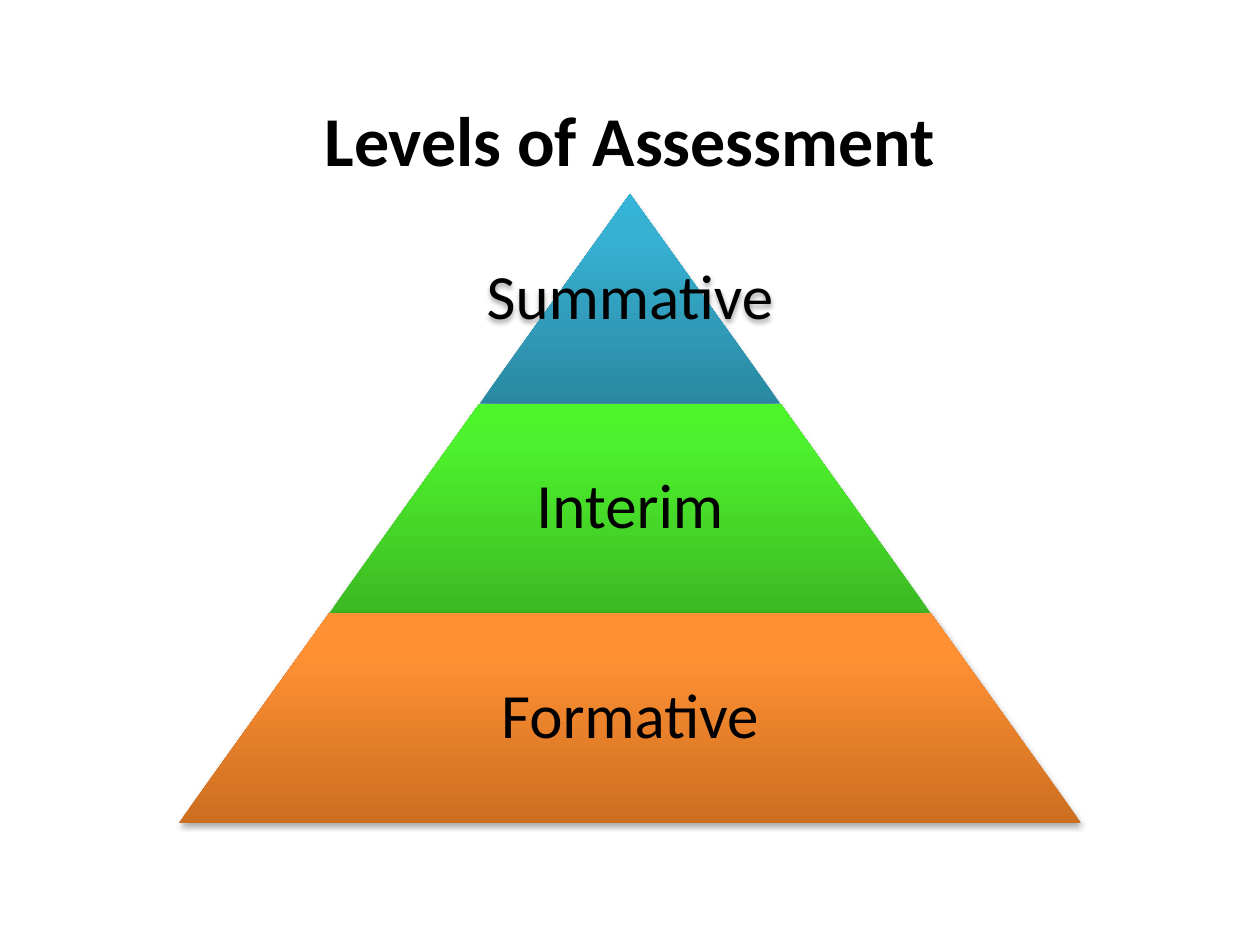
from dataclasses import dataclass
from lxml.etree import SubElement
from pptx import Presentation
from pptx.dml.color import RGBColor
from pptx.enum.text import MSO_ANCHOR, PP_ALIGN
from pptx.oxml.ns import qn
from pptx.util import Inches, Pt


@dataclass(frozen=True)
class Theme:
    font: str = "Calibri"
    ink: str = "000000"
    title_size: int = 40
    level_size: int = 36
    blue: tuple = ("2A88A2", "37B1D2", "34B4D6")
    green: tuple = ("3CB923", "4EF12D", "4CF52A")
    orange: tuple = ("CC6E20", "FF9034", "FF9136")
    stops: tuple = (0, 80, 100)


class SlideBuilder:
    """Draws themed titles and pyramid levels on one slide."""

    def __init__(self, slide, theme):
        self.slide = slide
        self.theme = theme

    def label(self, shape, wording, size, bold=False, side=0.1, spacing=1.0):
        frame = shape.text_frame
        layout = {
            "word_wrap": True,
            "vertical_anchor": MSO_ANCHOR.MIDDLE,
            "margin_left": Inches(side),
            "margin_right": Inches(side),
            "margin_top": Inches(0.05),
            "margin_bottom": Inches(0.05),
        }
        for name, value in layout.items():
            setattr(frame, name, value)
        paragraph = frame.paragraphs[0]
        paragraph.alignment = PP_ALIGN.CENTER
        paragraph.line_spacing = spacing
        run = paragraph.add_run()
        run.text = wording
        lettering = {"name": self.theme.font, "size": Pt(size), "bold": bold}
        for name, value in lettering.items():
            setattr(run.font, name, value)
        run.font.color.rgb = RGBColor.from_string(self.theme.ink)

    def title(self, wording, left, top, width, height):
        heading = self.slide.shapes.add_textbox(
            Inches(left), Inches(top), Inches(width), Inches(height))
        self.label(heading, wording, self.theme.title_size, bold=True)

    def shade(self, shape, colors):
        shape.fill.gradient()
        shape.fill.gradient_angle = 90
        stop_list = next(shape._element.spPr.iter(qn("a:gsLst")))
        for stop in list(stop_list):
            stop_list.remove(stop)
        for position, color in zip(self.theme.stops, colors):
            stop = SubElement(stop_list, qn("a:gs"), pos=str(position * 1000))
            SubElement(stop, qn("a:srgbClr"), val=color)

    def drop_shadow(self, shape):
        shape.shadow.inherit = False
        effects = shape._element.spPr.find(qn("a:effectLst"))
        shadow = SubElement(effects, qn("a:outerShdw"), blurRad="40000",
                            dist="23000", dir="5400000", rotWithShape="0")
        color = SubElement(shadow, qn("a:srgbClr"), val=self.theme.ink)
        SubElement(color, qn("a:alpha"), val="35000")

    def level(self, wording, colors, center, top, height, top_half, base_half):
        bottom = top + height
        corners = [(center - base_half, bottom), (center - top_half, top),
                   (center + top_half, top), (center + base_half, bottom)]
        start, *rest = [(Inches(x), Inches(y)) for x, y in corners]
        outline = self.slide.shapes.build_freeform(*start)
        outline.add_line_segments(rest, close=True)
        band = outline.convert_to_shape()
        self.shade(band, colors)
        band.line.fill.background()
        self.drop_shadow(band)
        side = 0.05 + (0.35 * base_half if top_half else 0)
        self.label(band, wording, self.theme.level_size, side=side, spacing=0.9)


def main():
    presentation = Presentation()
    presentation.slide_width = Inches(10)
    presentation.slide_height = Inches(7.5)
    theme = Theme()
    slide = presentation.slides.add_slide(presentation.slide_layouts[6])
    builder = SlideBuilder(slide, theme)
    builder.title("Levels of Assessment", 0, 0.76, 10, 0.68)

    levels = [("Summative", theme.blue), ("Interim", theme.green),
              ("Formative", theme.orange)]
    center, apex = 5, 1.54
    step_height = 4.99 / len(levels)
    step_half = 3.58 / len(levels)
    for index, (wording, colors) in enumerate(levels):
        builder.level(wording, colors, center, apex + index * step_height,
                      step_height, index * step_half, (index + 1) * step_half)
    presentation.save("out.pptx")


if __name__ == "__main__":
    main()
